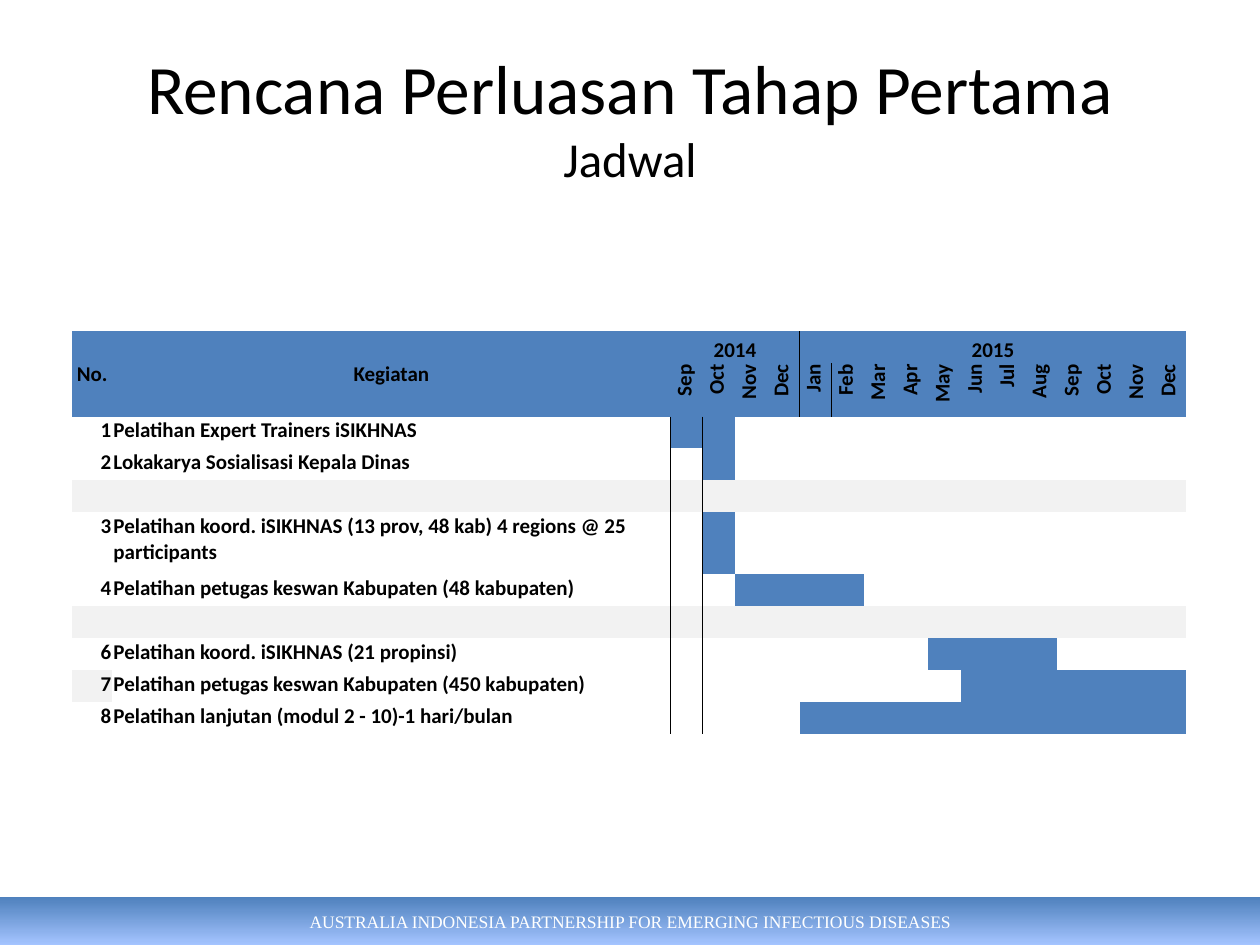
from lxml import etree
from pptx import Presentation
from pptx.dml.color import RGBColor
from pptx.enum import shapes, text
from pptx.oxml import ns
from pptx.util import Pt

BLUE = RGBColor(0x4F, 0x81, 0xBD)
PALE = RGBColor(0xA4, 0xC4, 0xFF)
GREY = RGBColor(0xF2, 0xF2, 0xF2)
WHITE = RGBColor(0xFF, 0xFF, 0xFF)
BLACK = RGBColor(0, 0, 0)

LEFT, MID, RIGHT = text.PP_ALIGN.LEFT, text.PP_ALIGN.CENTER, text.PP_ALIGN.RIGHT
TOP, CENTRE, BASE = (text.MSO_ANCHOR.TOP, text.MSO_ANCHOR.MIDDLE,
                     text.MSO_ANCHOR.BOTTOM)
NO_GRID = "{2D5ABB26-0587-4C30-8999-92F81FD0307C}"

MONTHS = "Jan Feb Mar Apr May Jun Jul Aug Sep Oct Nov Dec".split()
YEARS = [("2014", MONTHS[8:]), ("2015", MONTHS)]
# Number, activity, first month and count of months; None is a spacer row
TASKS = [
    ("1", "Pelatihan Expert Trainers iSIKHNAS", 0, 2),
    ("2", "Lokakarya Sosialisasi Kepala Dinas", 1, 1),
    None,
    ("3", "Pelatihan koord. iSIKHNAS (13 prov, 48 kab) 4 regions @ 25 participants", 1, 1),
    ("4", "Pelatihan petugas keswan Kabupaten (48 kabupaten)", 2, 4),
    None,
    ("6", "Pelatihan koord. iSIKHNAS (21 propinsi)", 8, 4),
    ("7", "Pelatihan petugas keswan Kabupaten (450 kabupaten)", 9, 7),
    ("8", "Pelatihan lanjutan (modul 2 - 10)-1 hari/bulan", 4, 12),
]


def write(para, words, size=12, font="Calibri", color=BLACK, bold=False, align=LEFT):
    para.alignment = align
    run = para.add_run()
    run.text = words
    run.font.size, run.font.name = Pt(size), font
    run.font.bold, run.font.color.rgb = bold, color


def paint(cell, fill=None, words="", align=LEFT, anchor=TOP):
    cell.margin_left = cell.margin_top = cell.margin_right = Pt(0.7)
    cell.margin_bottom = 0
    cell.vertical_anchor = anchor
    if fill is None:
        cell.fill.background()
    else:
        cell.fill.solid()
        cell.fill.fore_color.rgb = fill
    para = cell.text_frame.paragraphs[0]
    if words:
        write(para, words, bold=True, align=align)
    else:  # keeps an empty cell from stretching its row
        etree.SubElement(para._p, ns.qn("a:endParaRPr"), sz="1200")


def rule(cell, side):
    line = etree.Element(ns.qn("a:ln" + side), w=str(Pt(0.5)))
    fill = etree.SubElement(line, ns.qn("a:solidFill"))
    etree.SubElement(fill, ns.qn("a:srgbClr"), val=str(BLACK))
    cell._tc.get_or_add_tcPr().insert(0, line)


def divide(grid, row, col):
    """Draw a thin line between a cell and its right neighbour."""
    rule(grid.cell(row, col), "R")
    rule(grid.cell(row, col + 1), "L")


def add_band(slide, x, y, w, h):
    band = slide.shapes.add_shape(shapes.MSO_SHAPE.RECTANGLE, Pt(x), Pt(y), Pt(w), Pt(h))
    band.shadow.inherit = False
    band.line.fill.background()
    band.fill.gradient()
    band.fill.gradient_angle = 270
    for stop, color in zip(band.fill.gradient_stops, (BLUE, PALE)):
        stop.color.rgb = color
    for stop, place in zip(band.fill.gradient_stops, (0, 1)):
        stop.position = place
    band.text_frame.vertical_anchor = CENTRE
    write(band.text_frame.paragraphs[0],
          "AUSTRALIA INDONESIA PARTNERSHIP FOR EMERGING INFECTIOUS DISEASES",
          size=10, font="Times New Roman", color=WHITE, align=MID)


def add_title(slide, x, y, w, h):
    title = slide.shapes.title
    title.left, title.top, title.width, title.height = Pt(x), Pt(y), Pt(w), Pt(h)
    title.text_frame.vertical_anchor = CENTRE
    para = title.text_frame.paragraphs[0]
    write(para, "Rencana Perluasan Tahap Pertama", size=39.6, align=MID)
    para.add_line_break()
    write(para, "Jadwal", size=27.9, align=MID)


def add_plan(slide, x, y, w, h):
    count = sum(len(names) for _, names in YEARS)
    frame = slide.shapes.add_table(len(TASKS) + 2, count + 2, Pt(x), Pt(y), Pt(w), Pt(h))
    grid = frame.table
    grid.first_row = grid.horz_banding = False
    grid._tbl.tblPr.find(ns.qn("a:tableStyleId")).text = NO_GRID

    # Column widths and row heights
    wide = [23, 319]
    wide += [(w - sum(wide)) / count] * count
    for col, size in zip(grid.columns, wide):
        col.width = Pt(size)
    tall = {1: 30.5, 5: 35.5}
    plain = (h - sum(tall.values())) / (len(TASKS) + 2 - len(tall))
    for i, row in enumerate(grid.rows):
        row.height = Pt(tall.get(i, plain))

    # Header: two tall labels, then years above upright months
    for col, words in enumerate(("No.", "Kegiatan")):
        grid.cell(0, col).merge(grid.cell(1, col))
        paint(grid.cell(0, col), BLUE, words, MID, CENTRE)
    col = 2
    for year, names in YEARS:
        grid.cell(0, col).merge(grid.cell(0, col + len(names) - 1))
        paint(grid.cell(0, col), BLUE, year, MID, BASE)
        for i, name in enumerate(names, col):
            cell = grid.cell(1, i)
            paint(cell, BLUE, name, RIGHT, BASE)
            cell._tc.get_or_add_tcPr().set("vert", "vert270")
        col += len(names)
    split = 1 + len(YEARS[0][1])
    rule(grid.cell(0, 2), "R")
    rule(grid.cell(0, split + 1), "L")
    divide(grid, 1, split)

    # Activities and their bars
    for row, task in enumerate(TASKS, 2):
        base = None if task else GREY
        num, name, start, span = task or ("", "", 0, 0)
        paint(grid.cell(row, 0), GREY if num == "7" else base, num, RIGHT)
        paint(grid.cell(row, 1), base, name)
        for i in range(count):
            paint(grid.cell(row, i + 2), BLUE if start <= i < start + span else base)
        divide(grid, row, 1)


def main():
    deck = Presentation()
    deck.slide_width, deck.slide_height = Pt(720), Pt(540)
    slide = deck.slides.add_slide(deck.slide_layouts[5])
    add_band(slide, 0, 512.6, 720, 27.4)
    add_title(slide, 36, 21.6, 648, 90)
    add_plan(slide, 41.2, 189.3, 637.2, 230.4)
    deck.save("out.pptx")


if __name__ == "__main__":
    main()
